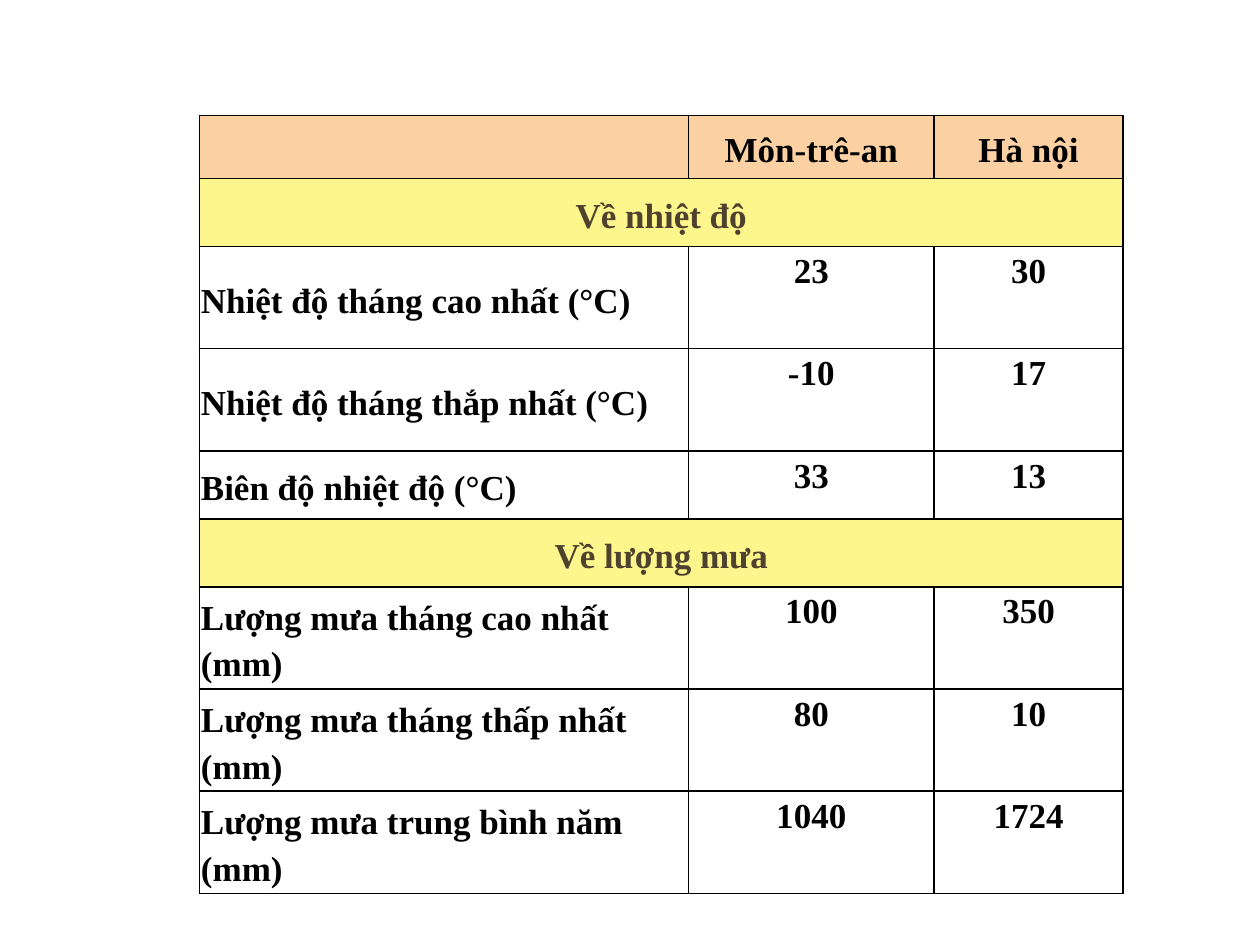
from pptx import Presentation
from pptx.dml.color import RGBColor
from pptx.enum.text import MSO_ANCHOR as Anchor, PP_ALIGN as Align
from pptx.oxml import parse_xml
from pptx.oxml.ns import nsdecls
from pptx.util import Cm, Pt

COLUMNS = [9.86, 4.95, 3.81]
HEADER, SECTION, ROW = 1.27, 1.37, 2.06
ROWS = [
    (HEADER, ["", "Môn-trê-an", "Hà nội"]),
    (SECTION, ["Về nhiệt độ"]),
    (ROW, ["Nhiệt độ tháng cao nhất (°C)", "23", "30"]),
    (ROW, ["Nhiệt độ tháng thắp nhất (°C)", "-10", "17"]),
    (SECTION, ["Biên độ nhiệt độ (°C)", "33", "13"]),
    (SECTION, ["Về lượng mưa"]),
    (ROW, ["Lượng mưa tháng cao nhất (mm)", "100", "350"]),
    (ROW, ["Lượng mưa tháng thấp nhất (mm)", "80", "10"]),
    (ROW, ["Lượng mưa trung bình năm (mm)", "1040", "1724"]),
]


def color(value):
    return RGBColor.from_string(value)


def assign(target, values):
    """Set each attribute named in values on target."""
    for name, value in values.items():
        setattr(target, name, value)


class ClimateSlide:
    font = {"name": "Times New Roman", "size": Pt(20), "bold": True}
    insets = {"margin_left": Cm(0.03), "margin_right": Cm(0.03),
              "margin_top": 0, "margin_bottom": 0}
    heading = {"fill": "FBD0A2", "ink": "000000", "anchor": Anchor.MIDDLE,
               "align": Align.CENTER, "spacing": 1.2}
    section = {**heading, "fill": "FDF68C", "ink": "4E412D"}
    label = {**heading, "fill": "FFFFFF", "align": Align.LEFT}
    value = {**heading, "fill": "FFFFFF", "anchor": Anchor.TOP, "spacing": 1.15}

    def __init__(self, prs):
        self.s = prs.slides.add_slide(prs.slide_layouts[6])

    def borders(self, cell):
        tcPr = cell._tc.get_or_add_tcPr()
        for side in "LRTB":
            tcPr.append(parse_xml(
                f'<a:ln{side} {nsdecls("a")} w="{Pt(1)}"><a:solidFill>'
                f'<a:srgbClr val="000000"/></a:solidFill></a:ln{side}>'))

    def cell(self, cell, text, style):
        assign(cell, {**self.insets, "vertical_anchor": style["anchor"]})
        self.borders(cell)
        cell.fill.solid()
        cell.fill.fore_color.rgb = color(style["fill"])
        if not text:
            return
        p = cell.text_frame.paragraphs[0]
        assign(p, {"alignment": style["align"], "line_spacing": style["spacing"]})
        r = p.add_run()
        r.text = text
        assign(r.font, self.font)
        r.font.color.rgb = color(style["ink"])

    def table(self, left, top, widths, rows):
        heights = [height for height, _ in rows]
        table = self.s.shapes.add_table(
            len(rows), len(widths), Cm(left), Cm(top),
            Cm(sum(widths)), Cm(sum(heights))).table
        for column, width in zip(table.columns, widths):
            column.width = Cm(width)
        for i, (height, texts) in enumerate(rows):
            table.rows[i].height = Cm(height)
            is_section = len(texts) == 1
            if is_section:
                table.cell(i, 0).merge(table.cell(i, len(widths) - 1))
            for j in range(len(widths)):
                if i == 0:
                    style = self.heading
                elif is_section:
                    style = self.section
                else:
                    style = self.value if j else self.label
                text = texts[j] if j < len(texts) else ""
                self.cell(table.cell(i, j), text, style)


def main():
    prs = Presentation()
    assign(prs, {"slide_width": Cm(25.4), "slide_height": Cm(19.05)})
    ClimateSlide(prs).table(4.02, 2.33, COLUMNS, ROWS)
    prs.save("out.pptx")


if __name__ == "__main__":
    main()
